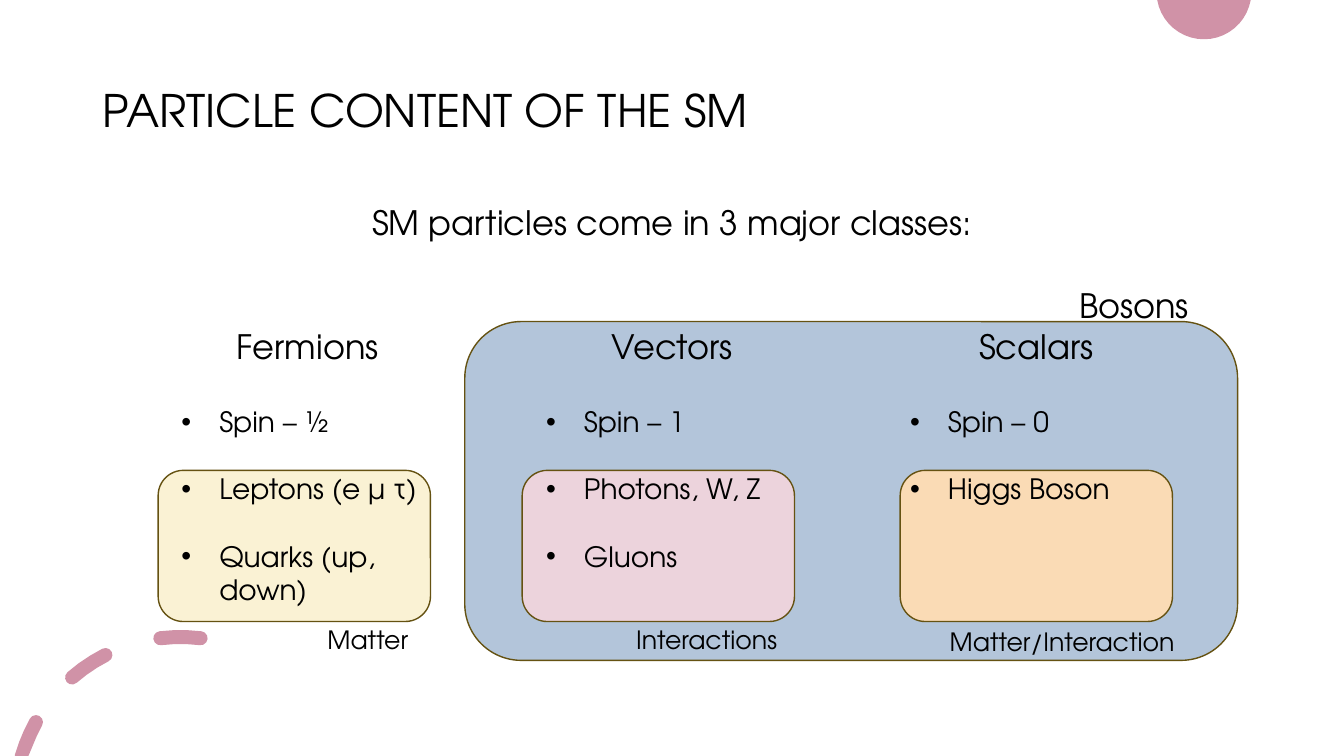
from math import cos, radians, sin

from lxml.etree import SubElement
from pptx import Presentation
from pptx.dml.color import RGBColor
from pptx.enum.shapes import MSO_SHAPE as SHAPE
from pptx.enum.text import MSO_ANCHOR as ANCHOR, PP_ALIGN as ALIGN
from pptx.oxml.ns import qn
from pptx.util import Pt

FONT = "TeX Gyre Adventor"
BLACK = RGBColor(0x00, 0x00, 0x00)
ROSE = RGBColor(0xD0, 0x92, 0xA7)
BROWN = RGBColor(0x65, 0x52, 0x12)
BLUE = RGBColor(0xB3, 0xC5, 0xDA)
CREAM = RGBColor(0xFA, 0xF2, 0xD4)
PINK = RGBColor(0xEC, 0xD3, 0xDC)
PEACH = RGBColor(0xFA, 0xDB, 0xB5)
HEIGHT = 540

prs = Presentation()
prs.slide_width, prs.slide_height = Pt(960), Pt(HEIGHT)
slide = prs.slides.add_slide(prs.slide_layouts[5])
shapes = slide.shapes


def add_text(text, x, y, w, h, size=24, align=ALIGN.LEFT, sp=None,
             anchor=ANCHOR.TOP, line=None, gap=0, bullet=False):
    """Write one paragraph per line of text, in sp or in a new text box."""
    sp = sp or shapes.add_textbox(0, 0, 0, 0)
    sp.left, sp.top, sp.width, sp.height = Pt(x), Pt(y), Pt(w), Pt(h)
    tf = sp.text_frame
    tf.word_wrap, tf.vertical_anchor = True, anchor
    tf.text = text
    for i, p in enumerate(tf.paragraphs):
        p.alignment, p.line_spacing = align, line
        p.space_before = Pt(gap if i else 0)
        font = p.runs[0].font
        font.name, font.size, font.color.rgb = FONT, Pt(size), BLACK
        if bullet:
            pPr = p._p.get_or_add_pPr()
            pPr.set("marL", str(Pt(27)))
            pPr.set("indent", str(Pt(-27)))
            SubElement(pPr, qn("a:buFont"), typeface="Arial")
            SubElement(pPr, qn("a:buChar"), char="•")


def arc(cx, cy, radius, start, end, steps):
    """Points on an arc inside the slide; degrees clockwise from the top."""
    angles = [radians(start + (end - start) * i / steps)
              for i in range(steps + 1)]
    return [(Pt(cx + radius * sin(a)),
             Pt(min(cy - radius * cos(a), HEIGHT))) for a in angles]


# Corner decoration: cut-off disc and dashed ring with rounded ends
disc = [arc(860, -5.8, 33.9, 99.9, 260.1, 20)]
cx, cy, radius, half = 128.9, 573, 118, 5
dashes = []
for start, end in [(-74, -61), (-41, -27), (-7, 7)]:
    contour = arc(cx, cy, radius + half, start, end, 3)
    for angle, turn in [(end, 0), (start, 180)]:
        if turn:
            contour += arc(cx, cy, radius - half, end, start, 3)
        a = radians(angle)
        contour += arc(cx + radius * sin(a), cy - radius * cos(a), half,
                       angle + turn, angle + turn + 180, 6)[1:-1]
    dashes.append(contour)
for contours in (disc, dashes):
    fb = shapes.build_freeform(*contours[0][0], scale=1.0)
    for contour in contours:
        if contour is not contours[0]:
            fb.move_to(*contour[0])
        fb.add_line_segments(contour[1:], close=True)
    sp = fb.convert_to_shape()
    sp.shadow.inherit = False
    sp.fill.solid()
    sp.fill.fore_color.rgb = ROSE
    sp.line.fill.background()

# Boson panel and particle cards
for x, y, w, h, color in [(332, 229.7, 552, 242, BLUE),
                          (643, 336, 194.5, 108, PEACH),
                          (373, 336, 194.5, 108, PINK),
                          (113, 336, 194.5, 108, CREAM)]:
    sp = shapes.add_shape(SHAPE.ROUNDED_RECTANGLE, Pt(x), Pt(y), Pt(w), Pt(h))
    sp.shadow.inherit = False
    sp.fill.solid()
    sp.fill.fore_color.rgb = color
    sp.line.color.rgb = BROWN
    sp.line.width = Pt(1)

# Title and introduction
add_text("PARTICLE CONTENT OF THE SM", 66, 28.75, 828, 104.4, size=32,
         sp=shapes.title, anchor=ANCHOR.MIDDLE, line=0.9)
add_text("SM particles come in 3 major classes:", 66, 144, 828, 60,
         align=ALIGN.CENTER, line=0.9)

# Class columns: heading and bullets
columns = [
    (122.5, "Fermions", "Spin – ½\nLeptons (e μ τ)\nQuarks (up, down)", 177),
    (383, "Vectors", "Spin – 1\nPhotons, W, Z\nGluons", 128),
    (643, "Scalars", "Spin – 0\nHiggs Boson", 80),
]
for x, heading, bullets, h in columns:
    add_text(heading, x, 229.3, 194.5, 36, align=ALIGN.CENTER)
    add_text(bullets, x, 285.5, 215, h, size=20, gap=24, bullet=True)

# Role labels and panel label
for text, x, y, w in [("Matter", 226.8, 442.6, 88),
                      ("Interactions", 447.3, 442.6, 131),
                      ("Matter/Interaction", 671.3, 444, 176)]:
    add_text(text, x, y, w, 29, size=18)
add_text("Bosons", 763.7, 200, 109, 36)

prs.save("out.pptx")
